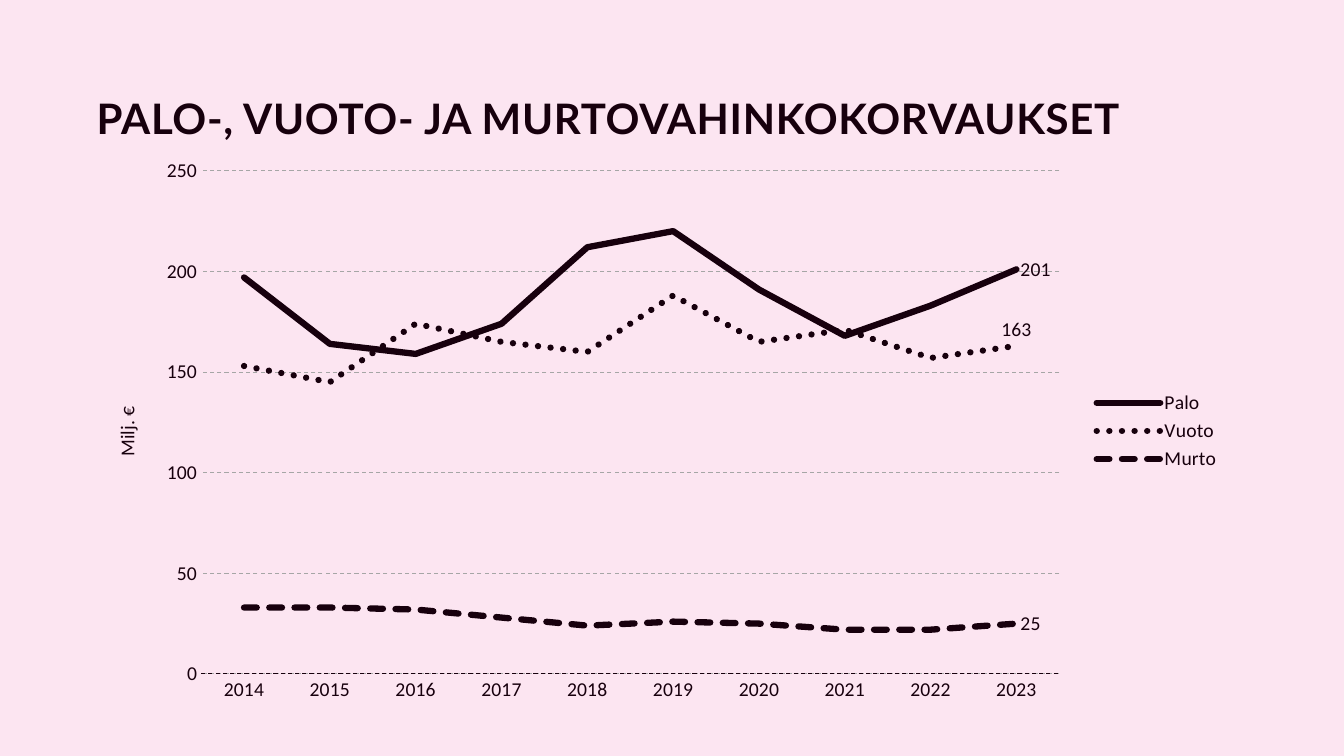
from dataclasses import dataclass
from typing import Optional

from lxml.etree import SubElement
from pptx import Presentation
from pptx.chart.data import CategoryChartData
from pptx.dml.color import RGBColor
from pptx.enum.chart import XL_CHART_TYPE as ChartType
from pptx.enum.chart import XL_LABEL_POSITION as LabelSide
from pptx.enum.chart import XL_LEGEND_POSITION as LegendSide
from pptx.enum.chart import XL_MARKER_STYLE as Marker
from pptx.enum.chart import XL_TICK_MARK as Tick
from pptx.enum.dml import MSO_LINE as Dash
from pptx.enum.shapes import MSO_SHAPE as Preset
from pptx.enum.text import MSO_ANCHOR as Anchor
from pptx.oxml.ns import qn
from pptx.util import Inches, Pt

INK = "17000D"
PINK = "FCE5F1"
GRID = "A6A6A6"
YEARS = [str(year) for year in range(2014, 2024)]


@dataclass(frozen=True)
class Claims:
    name: str
    values: tuple[int, ...]
    dash: Optional[Dash]
    label_side: LabelSide


CLAIMS = [
    Claims("Palo", (197, 164, 159, 174, 212, 220, 191, 168, 183, 201),
           None, LabelSide.RIGHT),
    Claims("Vuoto", (153, 145, 174, 165, 160, 188, 165, 171, 157, 163),
           Dash.ROUND_DOT, LabelSide.ABOVE),
    Claims("Murto", (33, 33, 32, 28, 24, 26, 25, 22, 22, 25),
           Dash.SQUARE_DOT, LabelSide.RIGHT),
]


def color(value: str) -> RGBColor:
    return RGBColor.from_string(value)


def style_font(font, size: float, face: str = "Calibri", bold: bool = False) -> None:
    font.size, font.name, font.bold = Pt(size), face, bold
    font.color.rgb = color(INK)


def style_line(line, tint: str, width: float, dash: Optional[Dash] = None) -> None:
    line.color.rgb = color(tint)
    line.width = Pt(width)
    if dash is not None:
        line.dash_style = dash


def place(part, index: int, **shares: float) -> None:
    """Give a chart part a manual layout in shares of the chart."""
    for old in part.findall(qn("c:layout")):
        part.remove(old)
    layout = SubElement(part, qn("c:layout"))
    part.insert(index, layout)
    manual = SubElement(layout, qn("c:manualLayout"))
    settings = {"xMode": "edge", "yMode": "edge", **shares}
    if "w" in shares:
        settings = {"layoutTarget": "inner", **settings}
    for tag, value in settings.items():
        SubElement(manual, qn(f"c:{tag}")).set("val", str(value))


def style_claims(series, claims: Claims) -> None:
    series.smooth = False
    series.marker.style = Marker.NONE
    style_line(series.format.line, INK, 4.5, claims.dash)
    series.format.line._get_or_add_ln().set("cap", "rnd")
    # Only the latest year carries its value
    series.data_labels.show_value = False
    latest = series.points[len(YEARS) - 1].data_label
    style_font(latest.font, 14)
    latest.position = claims.label_side


def style_axes(chart) -> None:
    years, millions = chart.category_axis, chart.value_axis
    for axis in (years, millions):
        axis.major_tick_mark = axis.minor_tick_mark = Tick.NONE
        style_font(axis.tick_labels.font, 14)
    style_line(years.format.line, INK, 0.75, Dash.DASH)
    millions.format.line.fill.background()
    millions.minimum_scale, millions.maximum_scale, millions.major_unit = 0, 250, 50
    style_line(millions.major_gridlines.format.line, GRID, 0.75, Dash.DASH)

    unit = millions.axis_title
    run = unit.text_frame.paragraphs[0].add_run()
    run.text = "Milj. €"
    style_font(run.font, 14)
    body = unit._element.find(".//" + qn("a:bodyPr"))
    body.set("rot", "-5400000")
    body.set("vert", "horz")
    place(unit._element, 1, x=0.02, y=0.45)


def add_claims_chart(slide, left: int, top: int, width: int, height: int) -> None:
    data = CategoryChartData()
    data.categories = YEARS
    for claims in CLAIMS:
        data.add_series(claims.name, claims.values)
    chart = slide.shapes.add_chart(
        ChartType.LINE, left, top, width, height, data).chart
    style_font(chart.font, 14)
    chart.has_title = False
    chart.plots[0].vary_by_categories = False
    for series, claims in zip(chart.plots[0].series, CLAIMS):
        style_claims(series, claims)
    style_axes(chart)
    chart.has_legend = True
    chart.legend.position = LegendSide.RIGHT
    chart.legend.include_in_layout = False
    style_font(chart.legend.font, 14)
    plot_area = chart._chartSpace.find(".//" + qn("c:plotArea"))
    place(plot_area, 0, x=0.1, y=0.04, w=0.75, h=0.89)


def add_heading(slide, left: int, top: int, width: int, height: int) -> None:
    frame = slide.shapes.add_textbox(left, top, width, height).text_frame
    frame.word_wrap = True
    frame.vertical_anchor = Anchor.BOTTOM
    paragraph = frame.paragraphs[0]
    paragraph.line_spacing = Pt(43.2)
    run = paragraph.add_run()
    run.text = "PALO-, VUOTO- JA MURTOVAHINKOKORVAUKSET"
    style_font(run.font, 30, "Lato", bold=True)
    run.font._element.set("spc", "50")


def main() -> None:
    deck = Presentation()
    deck.slide_width, deck.slide_height = Inches(13.33), Inches(7.5)
    wide, high = deck.slide_width, deck.slide_height
    slide = deck.slides.add_slide(deck.slide_layouts[6])

    # Backdrop
    backdrop = slide.shapes.add_shape(Preset.RECTANGLE, 0, 0, wide, high)
    backdrop.shadow.inherit = False
    backdrop.fill.solid()
    backdrop.fill.fore_color.rgb = color(PINK)
    backdrop.line.fill.background()

    # Heading above the chart, sharing its left edge
    left, chart_top = int(wide * 0.0645), int(high * 0.196)
    add_heading(slide, left, 0, int(wide * 0.837), chart_top)
    add_claims_chart(slide, left, chart_top, int(wide * 0.8515), int(high * 0.748))

    deck.save("out.pptx")


if __name__ == "__main__":
    main()
